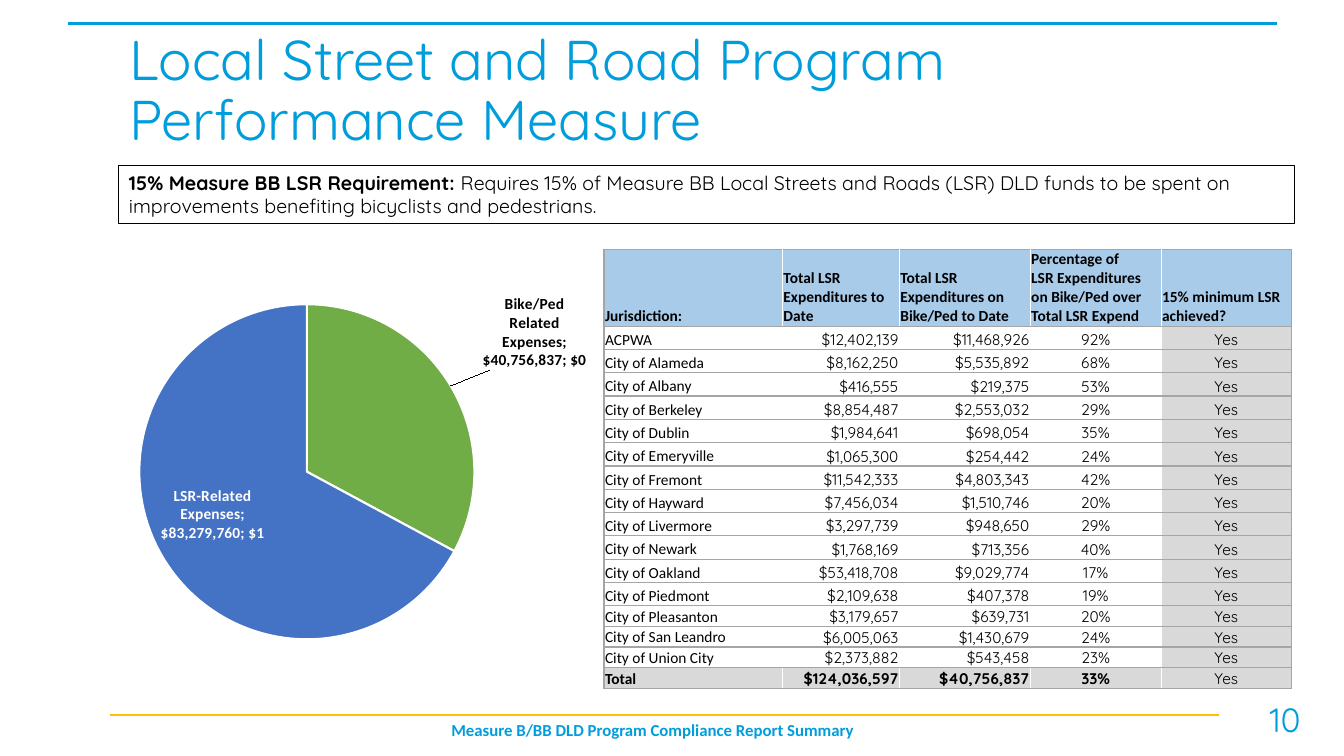
from dataclasses import dataclass
from lxml import etree
from pptx import Presentation
from pptx import util as u
from pptx.chart.data import CategoryChartData
from pptx.dml.color import RGBColor
from pptx.enum import chart as charts, shapes, text
from pptx.oxml import ns

BLUE = RGBColor(0x00, 0x9D, 0xDC)
GOLD = RGBColor(0xFF, 0xC0, 0x00)
BLACK = RGBColor(0, 0, 0)
WHITE = RGBColor(0xFF, 0xFF, 0xFF)
HEADER_BLUE = RGBColor(0xA8, 0xCB, 0xEA)
LIGHT_GRAY = RGBColor(0xD9, 0xD9, 0xD9)
BORDER_GRAY = RGBColor(0xA5, 0xA5, 0xA5)
PIE_GREEN = RGBColor(0x70, 0xAD, 0x47)
PIE_BLUE = RGBColor(0x44, 0x72, 0xC4)
MONEY = '"$"#,##0'
LEFT, CENTER, RIGHT = text.PP_ALIGN.LEFT, text.PP_ALIGN.CENTER, text.PP_ALIGN.RIGHT


@dataclass
class Rule:
    left: float
    top: float
    length: float
    color: RGBColor
    width: float


@dataclass
class Label:
    left: float
    top: float
    width: float
    height: float
    words: str
    font: str
    size: float
    bold: bool
    anchor: text.MSO_ANCHOR


@dataclass
class Slice:
    name: str
    value: int
    color: RGBColor
    label_color: RGBColor
    position: str
    shift_x: float
    shift_y: float


RULES = [Rule(78.5, 510.5, 792, GOLD, 1.5), Rule(48.5, 16.5, 864, BLUE, 2.25)]
LABELS = [
    Label(194.5, 510.5, 543.5, 27, "Measure B/BB DLD Program Compliance Report Summary",
          "Calibri", 12, True, text.MSO_ANCHOR.TOP),
    Label(885, 495.5, 66, 36, "10", "Quicksand", 24, False, text.MSO_ANCHOR.MIDDLE),
]
SLICES = [
    Slice("Bike/Ped Related Expenses", 40756837, PIE_GREEN, BLACK, "outEnd", 0.06, -0.03),
    Slice("LSR-Related Expenses", 83279760, PIE_BLUE, WHITE, "ctr", -0.04, 0),
]
COLUMN_WIDTHS = [127.5, 83.5, 93.5, 93.5, 93]
ROW_HEIGHTS = [55] + [16.65] * 12 + [14.75] * 4
ALIGNMENTS = [LEFT, RIGHT, RIGHT, CENTER, CENTER]
HEADER = ("Jurisdiction:", "Total LSR Expenditures to Date",
          "Total LSR Expenditures on Bike/Ped to Date",
          "Percentage of\vLSR Expenditures on Bike/Ped over Total LSR Expend",
          "15% minimum LSR achieved?")
SPENDING = [
    ("ACPWA", 12402139, 11468926, 92),
    ("City of Alameda", 8162250, 5535892, 68),
    ("City of Albany", 416555, 219375, 53),
    ("City of Berkeley", 8854487, 2553032, 29),
    ("City of Dublin", 1984641, 698054, 35),
    ("City of Emeryville", 1065300, 254442, 24),
    ("City of Fremont", 11542333, 4803343, 42),
    ("City of Hayward", 7456034, 1510746, 20),
    ("City of Livermore", 3297739, 948650, 29),
    ("City of Newark", 1768169, 713356, 40),
    ("City of Oakland", 53418708, 9029774, 17),
    ("City of Piedmont", 2109638, 407378, 19),
    ("City of Pleasanton", 3179657, 639731, 20),
    ("City of San Leandro", 6005063, 1430679, 24),
    ("City of Union City", 2373882, 543458, 23),
    ("Total", 124036597, 40756837, 33),
]


def points(*lengths: float) -> list[u.Length]:
    return [u.Pt(length) for length in lengths]


def set_font(font, name: str, size: float, color: RGBColor, bold: bool = False) -> None:
    font.name, font.size, font.bold = name, u.Pt(size), bold
    font.color.rgb = color


def add_rule(page, rule: Rule) -> None:
    line = page.shapes.add_connector(
        shapes.MSO_CONNECTOR.STRAIGHT,
        *points(rule.left, rule.top, rule.left + rule.length, rule.top))
    line.line.color.rgb, line.line.width = rule.color, u.Pt(rule.width)
    etree.SubElement(line._element.spPr, ns.qn("a:effectLst"))


def add_label(page, label: Label) -> None:
    box = page.shapes.add_textbox(*points(label.left, label.top, label.width, label.height))
    frame = box.text_frame
    frame.word_wrap, frame.vertical_anchor = True, label.anchor
    para = frame.paragraphs[0]
    para.text, para.alignment = label.words, CENTER
    set_font(para.font, label.font, label.size, BLUE, label.bold)


def fill_title(page) -> None:
    title = page.shapes.title
    title.left, title.top, title.width, title.height = points(85, 13.7, 792, 104.4)
    frame = title.text_frame
    frame.auto_size, frame.word_wrap = text.MSO_AUTO_SIZE.NONE, True
    frame.vertical_anchor = text.MSO_ANCHOR.MIDDLE
    para = frame.paragraphs[0]
    para.text = "Local Street and Road Program\vPerformance Measure"
    para.alignment, para.line_spacing = LEFT, 0.9
    set_font(para.font, "Quicksand", 40, BLUE)


def add_requirement(page) -> None:
    box = page.shapes.add_shape(shapes.MSO_SHAPE.RECTANGLE, *points(85, 118.5, 839.5, 41))
    box.shadow.inherit = False
    box.fill.background()
    box.line.color.rgb, box.line.width = BLACK, u.Pt(0.75)
    frame = box.text_frame
    frame.word_wrap, frame.vertical_anchor = True, text.MSO_ANCHOR.TOP
    para = frame.paragraphs[0]
    para.alignment = LEFT
    set_font(para.font, "Quicksand", 14, BLACK)
    span = para.add_run()
    span.text, span.font.bold = "15% Measure BB LSR Requirement: ", True
    para.add_run().text = (
        "Requires 15% of Measure BB Local Streets and Roads (LSR) DLD funds to be spent on "
        "improvements benefiting bicyclists and pedestrians.")


def chart_node(tag: str, **attributes: str):
    node = etree.Element(ns.qn(f"c:{tag}"))
    for key, value in attributes.items():
        node.set(key, value)
    return node


def manual_layout(**settings: str):
    layout = chart_node("layout")
    manual = etree.SubElement(layout, ns.qn("c:manualLayout"))
    for tag, value in settings.items():
        manual.append(chart_node(tag, val=value))
    return layout


def style_slice(series, index: int, part: Slice) -> None:
    point = series.points[index]
    point.format.fill.solid()
    point.format.fill.fore_color.rgb = part.color
    point.format.line.color.rgb, point.format.line.width = WHITE, u.Pt(1.5)
    set_font(point.data_label.font, "Calibri", 11, part.label_color, True)
    label = series.data_labels._element.findall(ns.qn("c:dLbl"))[index]
    for tag in ("dLblPos", "showLegendKey", "showVal", "showCatName", "showSerName",
                "showPercent", "showBubbleSize"):
        for node in label.findall(ns.qn(f"c:{tag}")):
            label.remove(node)
        shown = "1" if tag in ("showVal", "showCatName", "showPercent") else "0"
        label.append(chart_node(tag, val=part.position if tag == "dLblPos" else shown))
    separator = chart_node("separator")
    separator.text = "; "
    label.append(separator)
    label.insert(1, manual_layout(x=str(part.shift_x), y=str(part.shift_y)))
    label.insert(2, chart_node("numFmt", formatCode=MONEY, sourceLinked="0"))


def add_pie(page) -> None:
    data = CategoryChartData(number_format=MONEY)
    data.categories = [part.name for part in SLICES]
    data.add_series("Series 1", [part.value for part in SLICES])
    chart = page.shapes.add_chart(
        charts.XL_CHART_TYPE.PIE, *points(19.5, 178, 399.5, 303), data).chart
    chart.has_legend = chart.has_title = False
    set_font(chart.font, "Calibri", 10, BLACK)
    plot = chart.plots[0]
    plot.vary_by_categories = True
    series = plot.series[0]
    labels = series.data_labels
    labels.show_value = labels.show_category_name = True
    labels.number_format, labels.number_format_is_linked = MONEY, False
    set_font(labels.font, "Calibri", 11, WHITE, True)
    for index, part in enumerate(SLICES):
        style_slice(series, index, part)
    area = chart._chartSpace.chart.plotArea
    for node in area.findall(ns.qn("c:layout")):
        area.remove(node)
    area.insert(0, manual_layout(layoutTarget="inner", xMode="edge", yMode="edge",
                                 x="0.2", y="0.13", w="0.6", h="0.79"))


def add_border(cell, side: str) -> None:
    properties = cell._tc.get_or_add_tcPr()
    line = etree.SubElement(properties, ns.qn(f"a:{side}"), w=str(u.Pt(1)))
    fill = etree.SubElement(line, ns.qn("a:solidFill"))
    etree.SubElement(fill, ns.qn("a:srgbClr"), val=str(BORDER_GRAY))


def add_spending_table(page) -> None:
    rows = [HEADER] + [(name, f"${spent:,}", f"${bike:,}", f"{share}%", "Yes")
                       for name, spent, bike, share in SPENDING]
    table = page.shapes.add_table(len(rows), len(HEADER), *points(
        431.5, 178, sum(COLUMN_WIDTHS), sum(ROW_HEIGHTS))).table
    for column, width in zip(table.columns, COLUMN_WIDTHS):
        column.width = u.Pt(width)
    last_row, last_column = len(rows) - 1, len(HEADER) - 1
    for r, (row, height) in enumerate(zip(rows, ROW_HEIGHTS)):
        table.rows[r].height = u.Pt(height)
        for c, words in enumerate(row):
            cell = table.cell(r, c)
            cell.margin_left, cell.margin_right, cell.margin_top, cell.margin_bottom = points(
                0.7, 0.7, 0.7, 0)
            cell.vertical_anchor = text.MSO_ANCHOR.BOTTOM
            edges = {"lnL": c == 0, "lnR": c == last_column, "lnT": True, "lnB": True}
            for side in (side for side, drawn in edges.items() if drawn):
                add_border(cell, side)
            gray = r == last_row or c == last_column
            cell.fill.solid()
            cell.fill.fore_color.rgb = HEADER_BLUE if r == 0 else LIGHT_GRAY if gray else WHITE
            para = cell.text_frame.paragraphs[0]
            para.text, para.alignment = words, LEFT if r == 0 else ALIGNMENTS[c]
            bold = r == 0 or (r == last_row and c < last_column)
            set_font(para.font, "Calibri" if r == 0 or c == 0 else "Quicksand", 11, BLACK, bold)


def main() -> None:
    deck = Presentation()
    deck.slide_width, deck.slide_height = points(960, 540)
    page = deck.slides.add_slide(deck.slide_layouts[5])
    for label in LABELS:
        add_label(page, label)
    for rule in RULES:
        add_rule(page, rule)
    fill_title(page)
    add_requirement(page)
    add_pie(page)
    add_spending_table(page)
    deck.save("out.pptx")


if __name__ == "__main__":
    main()
